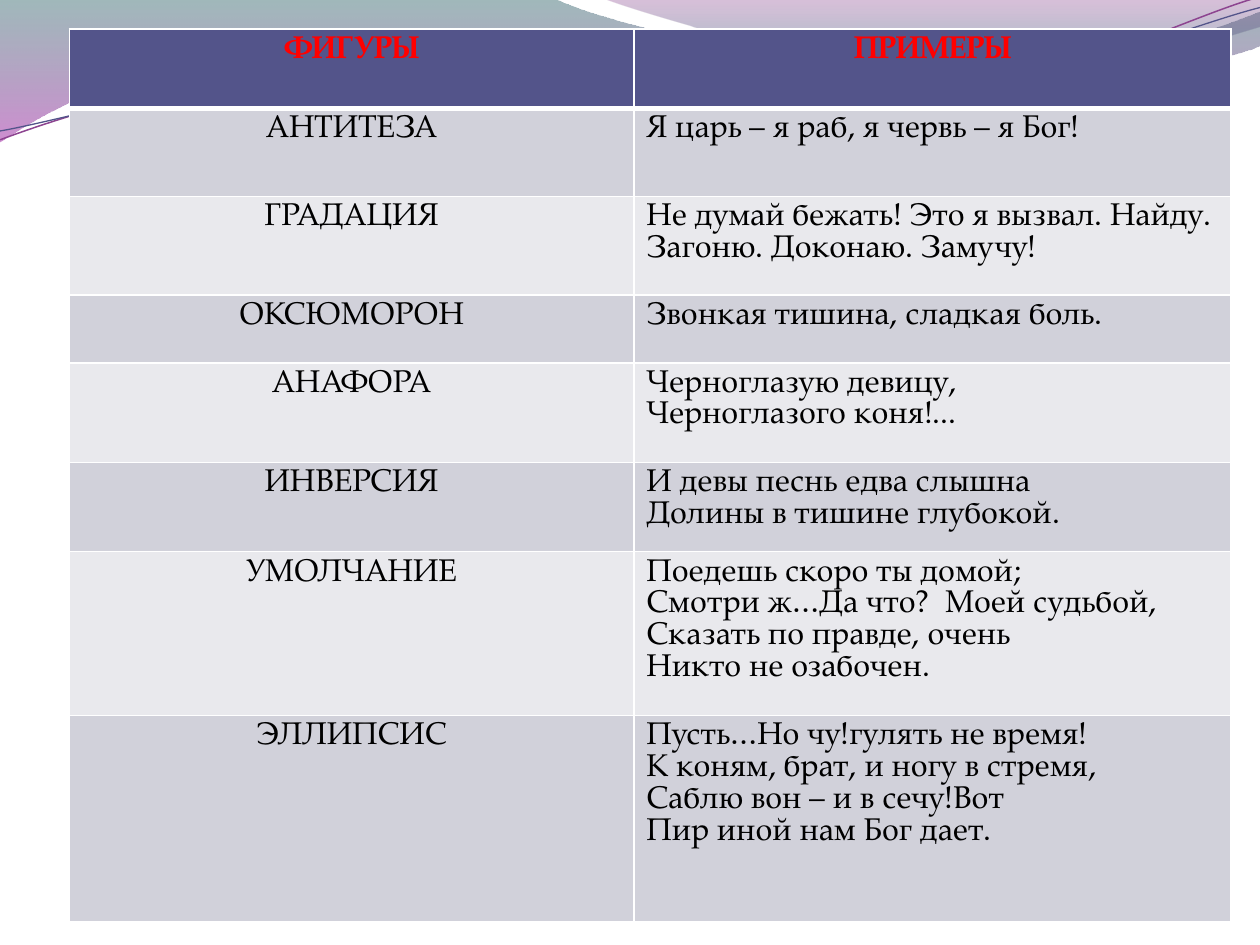
from math import cos, radians, sin

from lxml.etree import SubElement
from pptx import Presentation
from pptx.dml.color import RGBColor
from pptx.enum.text import PP_ALIGN as Align
from pptx.oxml import parse_xml
from pptx.oxml.ns import nsdecls, qn
from pptx.util import Inches, Pt

FONT = "TeX Gyre Pagella"
WHITE = RGBColor(0xFF, 0xFF, 0xFF)
BLACK = RGBColor(0, 0, 0)
RED = RGBColor(0xFF, 0, 0)
INDIGO = RGBColor(0x53, 0x54, 0x8A)
PURPLE = RGBColor(0x8D, 0x44, 0x90)
TEAL = RGBColor(0x2D, 0x63, 0x68)
MAGENTA = RGBColor(0xA5, 0x30, 0xA9)
PLUM = RGBColor(0x7F, 0x2F, 0x82)
SEA = RGBColor(0x2F, 0x7B, 0x82)
BANDS = (RGBColor(0xD1, 0xD1, 0xDA), RGBColor(0xE9, 0xE9, 0xED))

BROAD_WAVE = [
    (0, 0), (4.4, -0.01),
    (4.76, 0.17, 6.64, 0.63, 7.58, 0.63), (8.53, 0.63, 9.58, 0.26, 10, 0.09),
    (10.01, 0.36),
    (9.83, 0.44, 8.7, 0.76, 7.46, 0.75), (6.22, 0.75, 3.82, 0.28, 2.57, 0.34),
    (1.29, 0.36, 0.46, 0.83, -0.01, 1.13),
]
CORNER_WAVE = [
    (4.79, -0.01),
    (5.09, 0.11, 6.82, 0.62, 7.69, 0.65), (8.56, 0.69, 9.61, 0.32, 10, 0.21),
    (10, 0),
]
UPPER_LINE = [
    (0, 1.11),
    (0.48, 0.93, 1.58, 0.57, 2.77, 0.52), (3.95, 0.47, 5.93, 0.89, 7.13, 0.8),
    (8.33, 0.71, 9.38, 0.15, 9.98, -0.02),
]
LOWER_LINE = [
    (0, 1.04),
    (0.47, 0.96, 1.64, 0.61, 2.83, 0.56), (4.03, 0.51, 5.97, 0.84, 7.17, 0.75),
    (8.36, 0.67, 9.41, 0.21, 10, 0.06),
]
TILT = -2.7

HEADINGS = ("ФИГУРЫ", "ПРИМЕРЫ")
FIGURES = [
    ("АНТИТЕЗА", ["Я царь – я раб, я червь – я Бог!"]),
    ("ГРАДАЦИЯ", ["Не думай бежать! Это я вызвал. Найду. Загоню. Доконаю. Замучу!"]),
    ("ОКСЮМОРОН", ["Звонкая тишина, сладкая боль."]),
    ("АНАФОРА", ["Черноглазую девицу,", "Черноглазого коня!..."]),
    ("ИНВЕРСИЯ", ["И девы песнь едва слышна", "Долины в тишине глубокой."]),
    ("УМОЛЧАНИЕ", ["Поедешь скоро ты домой;", "Смотри ж…Да что?  Моей судьбой,",
                   "Сказать по правде, очень", "Никто не озабочен."]),
    ("ЭЛЛИПСИС", ["Пусть…Но чу!гулять не время!", "К коням, брат, и ногу в стремя,",
                  "Саблю вон – и в сечу!Вот", "Пир иной нам Бог дает."]),
]
COLUMN_WIDTHS = (4.48, 4.74)
ROW_HEIGHTS = (0.63, 0.7, 0.78, 0.54, 0.79, 0.71, 1.3, 1.64)


def add_outline(slide, box, segments, close):
    """Draw points and cubic curves given in inches from the box's corner."""
    left, top = box[:2]
    nodes = [[(left + Inches(x), top + Inches(y)) for x, y in zip(seg[::2], seg[1::2])]
             for seg in segments]
    builder = slide.shapes.build_freeform(*nodes[0][0])
    builder.add_line_segments([node[-1] for node in nodes[1:]], close=close)
    sp = builder.convert_to_shape()
    sp.shadow.inherit = False
    lines = list(sp._element.spPr.iter(qn("a:lnTo")))
    for line, node in zip(lines, nodes[1:]):
        if len(node) == 3:
            curve = line.makeelement(qn("a:cubicBezTo"))
            for x, y in node:
                pt = SubElement(curve, qn("a:pt"))
                pt.set("x", str(x - sp.left))
                pt.set("y", str(y - sp.top))
            line.getparent().replace(line, curve)
    return sp


def add_wave(slide, box, segments, stops):
    """Add a closed wave with a translucent vertical gradient."""
    sp = add_outline(slide, box, segments, True)
    sp.line.fill.background()
    sp.fill.gradient()
    sp.fill.gradient_angle = 270
    for stop, (position, color, opacity) in zip(sp.fill.gradient_stops, stops):
        stop.position = position
        stop.color.rgb = color
    colors = sp._element.spPr.iter(qn("a:srgbClr"))
    for clr, (position, color, opacity) in zip(colors, stops):
        SubElement(clr, qn("a:alpha")).set("val", str(opacity * 1000))


def level(segments, center):
    """Turn the segments back by the tilt around the center."""
    c, s = cos(radians(-TILT)), sin(radians(-TILT))
    cx, cy = center
    result = []
    for seg in segments:
        turned = []
        for x, y in zip(seg[::2], seg[1::2]):
            dx, dy = x - cx, y - cy
            turned += [cx + dx * c - dy * s, cy + dx * s + dy * c]
        result.append(tuple(turned))
    return result


def add_curve(slide, box, segments, center, color, width):
    """Add an open thin curve as a tilted shape."""
    sp = add_outline(slide, box, level(segments, center), False)
    sp.rotation = TILT
    sp.fill.background()
    sp.line.color.rgb = color
    sp.line.width = Pt(width)


def add_header_waves(slide, box):
    """Decorate the top of the slide with waves and curves."""
    add_wave(slide, box, BROAD_WAVE, [(0, TEAL, 45), (1, MAGENTA, 55)])
    add_wave(slide, box, CORNER_WAVE, [(0, PLUM, 30), (0.8, SEA, 45)])
    add_curve(slide, box, UPPER_LINE, (4.99, 0.58), PURPLE, 0.85)
    add_curve(slide, box, LOWER_LINE, (5, 0.59), INDIGO, 0.75)


def set_borders(cell, top, bottom):
    """Give a cell white borders, with top and bottom widths in points."""
    tcPr = cell._tc.get_or_add_tcPr()
    sides = (("L", 1), ("R", 1), ("T", top), ("B", bottom))
    for i, (side, width) in enumerate(sides):
        tcPr.insert(i, parse_xml(
            f'<a:ln{side} {nsdecls("a")} w="{Pt(width)}"><a:solidFill>'
            f'<a:srgbClr val="{WHITE}"/></a:solidFill></a:ln{side}>'))


def fill_cell(cell, lines, fill, color, bold, align):
    """Write the lines into a cell, one paragraph each."""
    cell.fill.solid()
    cell.fill.fore_color.rgb = fill
    tf = cell.text_frame
    for i, line in enumerate(lines):
        p = tf.add_paragraph() if i else tf.paragraphs[0]
        p.alignment = align
        p.line_spacing = Pt(18.2)
        r = p.add_run()
        r.text = line
        r.font.name = FONT
        r.font.size = Pt(18)
        r.font.bold = bold
        r.font.color.rgb = color


def add_figures_table(slide, box):
    """Add the table of figures of speech and their examples."""
    table = slide.shapes.add_table(len(FIGURES) + 1, 2, *box).table
    table.horz_banding = False
    for column, width in zip(table.columns, COLUMN_WIDTHS):
        column.width = int(box[2] * width / sum(COLUMN_WIDTHS))
    for row, height in zip(table.rows, ROW_HEIGHTS):
        row.height = int(box[3] * height / sum(ROW_HEIGHTS))
    for c, heading in enumerate(HEADINGS):
        fill_cell(table.cell(0, c), [heading], INDIGO, RED, True, Align.CENTER)
        set_borders(table.cell(0, c), 1, 3)
    for i, (figure, example) in enumerate(FIGURES):
        for c, (lines, align) in enumerate((([figure], Align.CENTER), (example, Align.LEFT))):
            cell = table.cell(i + 1, c)
            fill_cell(cell, lines, BANDS[i % 2], BLACK, False, align)
            set_borders(cell, 1 if i else 3, 1)


def main():
    """Build and save the slide."""
    prs = Presentation()
    prs.slide_width, prs.slide_height = Inches(10), Inches(7.5)
    slide = prs.slides.add_slide(prs.slide_layouts[6])
    add_header_waves(slide, (0, 0, prs.slide_width, Inches(1.13)))
    add_figures_table(slide, (Inches(0.55), Inches(0.23), Inches(9.22), Inches(7.09)))
    prs.save("out.pptx")


if __name__ == "__main__":
    main()
